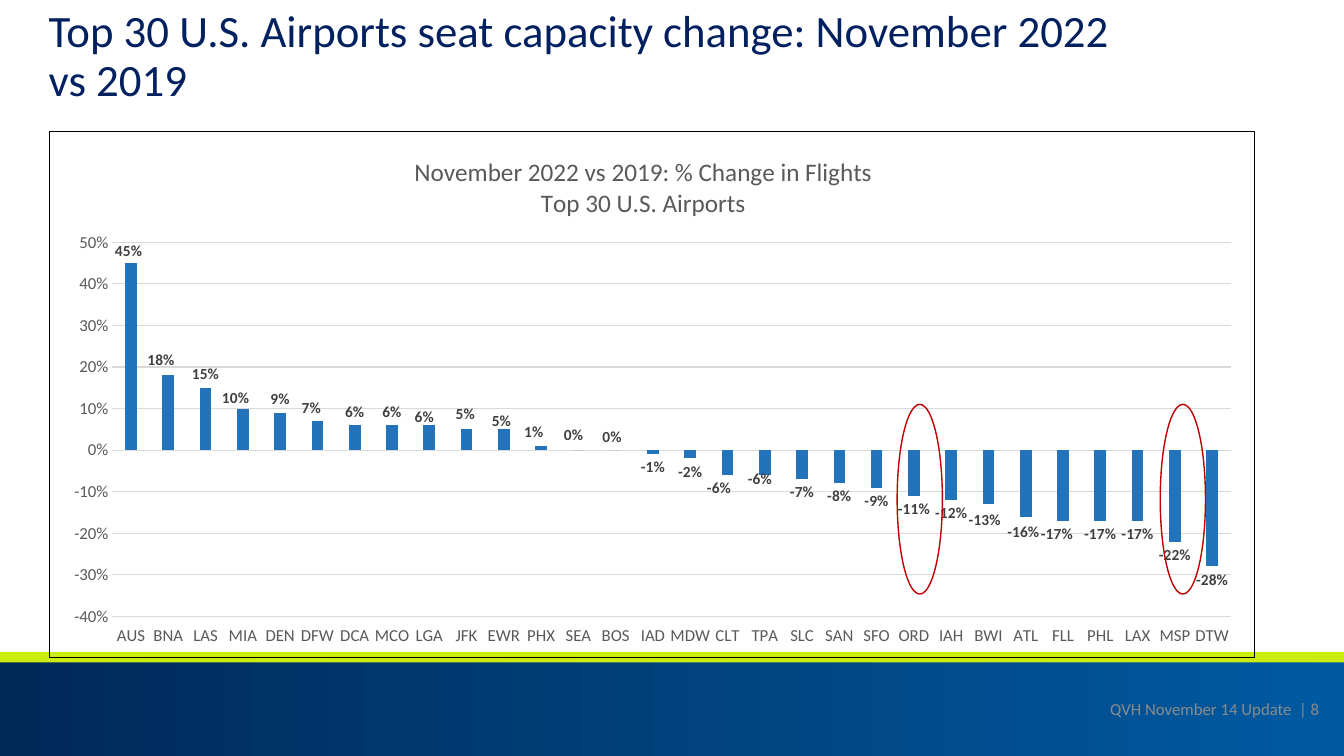
from lxml import etree
from pptx import Presentation
from pptx.chart.data import CategoryChartData
from pptx.dml.color import RGBColor
from pptx.enum.chart import XL_CHART_TYPE, XL_LABEL_POSITION, XL_TICK_LABEL_POSITION, XL_TICK_MARK
from pptx.enum.shapes import MSO_SHAPE
from pptx.enum.text import MSO_ANCHOR, MSO_AUTO_SIZE, PP_ALIGN
from pptx.oxml import parse_xml
from pptx.oxml.ns import nsdecls, qn
from pptx.util import Cm, Pt

LEFT, RIGHT, CENTER = PP_ALIGN.LEFT, PP_ALIGN.RIGHT, PP_ALIGN.CENTER
MIDDLE = MSO_ANCHOR.MIDDLE
OUTSIDE_END = XL_LABEL_POSITION.OUTSIDE_END
NO_TICK = XL_TICK_MARK.NONE

BLACK = RGBColor(0x00, 0x00, 0x00)
NAVY = RGBColor(0x00, 0x20, 0x60)
BAND_DARK = RGBColor(0x00, 0x29, 0x58)
BAND_LIGHT = RGBColor(0x00, 0x5A, 0xA1)
LIME = RGBColor(0xCB, 0xEC, 0x0F)
BAR_BLUE = RGBColor(0x22, 0x73, 0xBA)
RED = RGBColor(0xC0, 0x00, 0x00)
FOOTER_GREY = RGBColor(0x8C, 0x8C, 0x8C)
LABEL_GREY = RGBColor(0x40, 0x40, 0x40)
AXIS_GREY = RGBColor(0x59, 0x59, 0x59)
GRID_GREY = RGBColor(0xD9, 0xD9, 0xD9)

FONT = "Calibri"
SLIDE_W, SLIDE_H = 33.87, 19.05

AIRPORTS = ("AUS BNA LAS MIA DEN DFW DCA MCO LGA JFK EWR PHX SEA BOS IAD "
            "MDW CLT TPA SLC SAN SFO ORD IAH BWI ATL FLL PHL LAX MSP DTW").split()
CHANGES = [45, 18, 15, 10, 9, 7, 6, 6, 6, 5, 5, 1, 0, 0, -1,
           -2, -6, -6, -7, -8, -9, -11, -12, -13, -16, -17, -17, -17, -22, -28]

# Label shifts as thousandths of the chart's width and height
LABEL_SHIFTS = {
    "AUS": (-2, 2), "BNA": (-6, -4), "MIA": (-6, 6), "DFW": (-5, 2),
    "LGA": (-4, 10), "JFK": (-1, -4), "EWR": (-2, 10), "PHX": (-6, 0),
    "SEA": (-4, -2), "BOS": (-3, 0), "CLT": (-7, 0), "TPA": (-4, -17),
    "BWI": (-3, 6), "ATL": (-2, 4), "FLL": (-5, 0),
}


def set_font(font, size, color, bold=False):
    font.name, font.size, font.bold = FONT, Pt(size), bold
    font.color.rgb = color


def write(tf, text, size=12, color=BLACK, align=LEFT, spacing=None):
    """Fill a text frame, one paragraph per line of text."""
    for i, line in enumerate(text.split("\n")):
        p = tf.paragraphs[0] if i == 0 else tf.add_paragraph()
        p.alignment = align
        if spacing:
            p.line_spacing = spacing
        r = p.add_run()
        r.text = line
        set_font(r.font, size, color)


def place(sp, left, top, width, height):
    sp.left, sp.top, sp.width, sp.height = Cm(left), Cm(top), Cm(width), Cm(height)


def add_title(slide, text):
    title = slide.shapes.title
    place(title, 0.97, 0.28, 28.07, 2.34)
    tf = title.text_frame
    tf.auto_size = MSO_AUTO_SIZE.NONE
    tf.vertical_anchor = MIDDLE
    write(tf, text, size=32, color=NAVY, spacing=0.9)


def add_shape(slide, kind, left, top, width, height):
    sp = slide.shapes.add_shape(kind, Cm(left), Cm(top), Cm(width), Cm(height))
    sp.shadow.inherit = False
    return sp


def add_footer(slide, text):
    band = add_shape(slide, MSO_SHAPE.RECTANGLE, 0, 16.69, SLIDE_W, 2.36)
    band.line.fill.background()
    band.fill.gradient()
    band.fill.gradient_angle = 0
    for stop, color in zip(band.fill.gradient_stops, (BAND_DARK, BAND_LIGHT)):
        stop.color.rgb = color
    stripe = add_shape(slide, MSO_SHAPE.RECTANGLE, 0, 16.43, SLIDE_W, 0.26)
    stripe.line.fill.background()
    stripe.fill.solid()
    stripe.fill.fore_color.rgb = LIME
    tb = slide.shapes.add_textbox(Cm(25.93), Cm(17.27), Cm(7.57), Cm(1.19))
    tb.text_frame.word_wrap = True
    tb.text_frame.vertical_anchor = MIDDLE
    write(tb.text_frame, text, color=FOOTER_GREY, align=RIGHT)


def add_ring(slide, left):
    ring = add_shape(slide, MSO_SHAPE.OVAL, left, 10.19, 1.14, 4.78)
    ring.fill.background()
    ring.line.color.rgb = RED
    ring.line.width = Pt(1)


def set_layout(parent, index, **values):
    """Give a chart part a manual layout, as child number index."""
    for old in parent.findall(qn("c:layout")):
        parent.remove(old)
    layout = etree.Element(qn("c:layout"))
    manual = etree.SubElement(layout, qn("c:manualLayout"))
    for name, value in values.items():
        etree.SubElement(manual, qn("c:" + name)).set("val", str(value))
    parent.insert(index, layout)


def format_axis(axis, line):
    axis.major_tick_mark = axis.minor_tick_mark = NO_TICK
    set_font(axis.tick_labels.font, 12, AXIS_GREY)
    if line:
        axis.format.line.color.rgb = GRID_GREY
        axis.format.line.width = Pt(0.75)
    else:
        axis.format.line.fill.background()


def format_axes(chart):
    cat, val = chart.category_axis, chart.value_axis
    format_axis(cat, line=True)
    cat.tick_label_position = XL_TICK_LABEL_POSITION.LOW
    format_axis(val, line=False)
    val.minimum_scale, val.maximum_scale, val.major_unit = -0.4, 0.5, 0.1
    val.tick_labels.number_format = "0%"
    val.tick_labels.number_format_is_linked = False
    val.has_major_gridlines = True
    grid = val.major_gridlines.format.line
    grid.color.rgb = GRID_GREY
    grid.width = Pt(0.75)


def format_labels(chart, series):
    labels = series.data_labels
    labels.show_value = True
    labels.number_format = "0%"
    labels.number_format_is_linked = False
    labels.position = OUTSIDE_END
    set_font(labels.font, 11, LABEL_GREY, bold=True)
    for airport in LABEL_SHIFTS:
        label = series.points[AIRPORTS.index(airport)].data_label
        label.position = OUTSIDE_END
        set_font(label.font, 11, LABEL_GREY, bold=True)
    for dlbl in chart.element.xpath(".//c:dLbl"):
        dx, dy = LABEL_SHIFTS[AIRPORTS[int(dlbl.find(qn("c:idx")).get("val"))]]
        set_layout(dlbl, 1, x=dx / 1000, y=dy / 1000)


def add_border(chart):
    border = parse_xml(
        f'<c:spPr {nsdecls("c", "a")}><a:noFill/><a:ln w="{Pt(0.75)}"><a:solidFill>'
        f'<a:srgbClr val="{BLACK}"/></a:solidFill></a:ln></c:spPr>')
    chart.element.find(qn("c:chart")).addnext(border)


def add_change_chart(slide, title):
    data = CategoryChartData(number_format="0%")
    data.categories = AIRPORTS
    data.add_series("Series 1", [change / 100 for change in CHANGES])
    chart = slide.shapes.add_chart(XL_CHART_TYPE.COLUMN_CLUSTERED, Cm(1.24), Cm(3.3),
                                   Cm(30.4), Cm(13.28), data).chart
    set_font(chart.font, 10, BLACK)
    chart.has_legend = False
    write(chart.chart_title.text_frame, title, size=18, color=AXIS_GREY, align=CENTER)
    set_layout(chart.element.xpath("c:chart/c:title")[0], 1,
               xMode="edge", yMode="edge", x=0.3, y=0.04)
    set_layout(chart.element.xpath("c:chart/c:plotArea")[0], 0, layoutTarget="inner",
               xMode="edge", yMode="edge", x=0.052, y=0.211, w=0.928, h=0.711)
    plot = chart.plots[0]
    plot.gap_width, plot.overlap, plot.vary_by_categories = 219, -27, False
    series = plot.series[0]
    series.invert_if_negative = False
    series.format.fill.solid()
    series.format.fill.fore_color.rgb = BAR_BLUE
    format_axes(chart)
    format_labels(chart, series)
    add_border(chart)


def main():
    prs = Presentation()
    prs.slide_width, prs.slide_height = Cm(SLIDE_W), Cm(SLIDE_H)
    slide = prs.slides.add_slide(prs.slide_layouts[5])
    add_title(slide, "Top 30 U.S. Airports seat capacity change: November 2022 vs 2019")
    add_footer(slide, "QVH November 14 Update  | 8")
    add_change_chart(slide, "November 2022 vs 2019: % Change in Flights\nTop 30 U.S. Airports")
    for left in (29.24, 22.61):
        add_ring(slide, left)
    prs.save("out.pptx")


if __name__ == "__main__":
    main()
